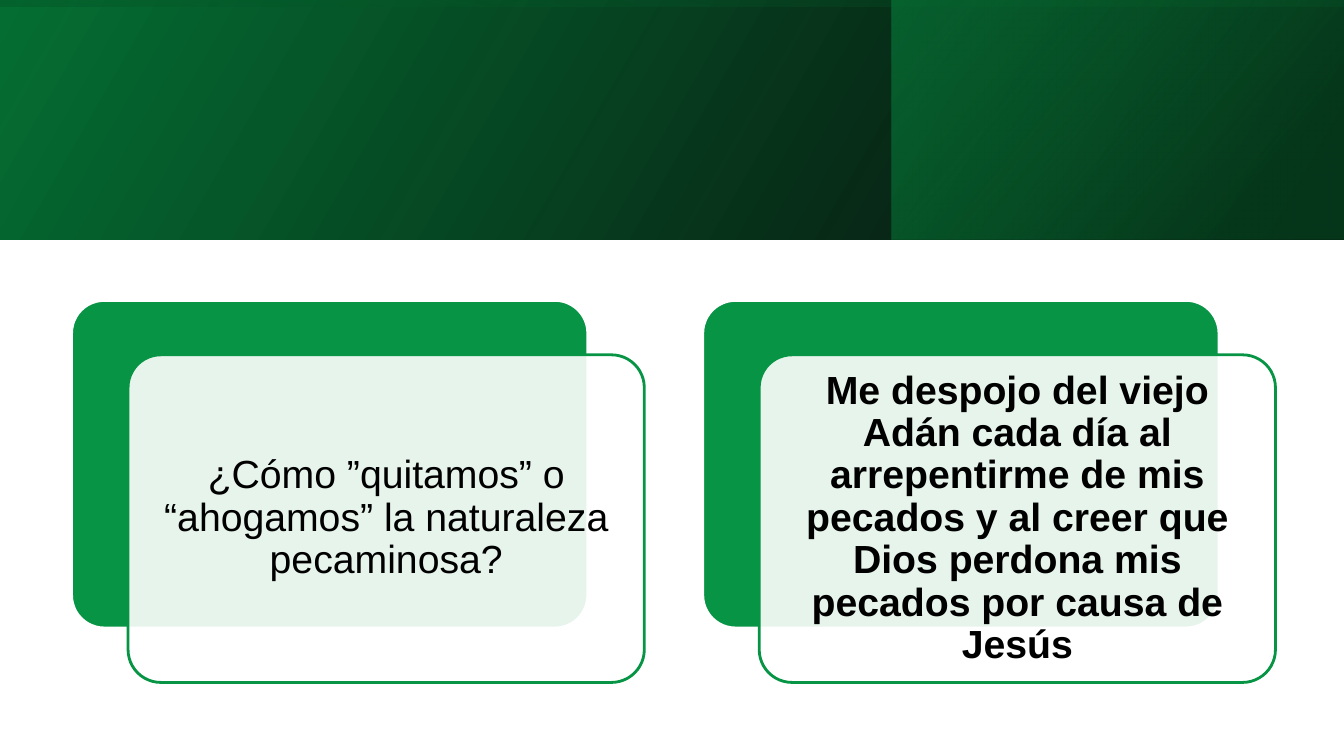
from dataclasses import dataclass

from lxml.etree import SubElement
from pptx import Presentation
from pptx.dml.color import RGBColor
from pptx.enum.shapes import MSO_SHAPE
from pptx.enum.text import MSO_ANCHOR, PP_ALIGN
from pptx.oxml.ns import qn
from pptx.shapes.autoshape import Shape
from pptx.slide import Slide
from pptx.util import Inches, Pt

GREEN, WHITE, BLACK = "079444", "FFFFFF", "000000"
CARD_W, CARD_H = 5.12, 3.25
LEFT, TOP, PITCH = 0.71, 2.98, 6.26
SHIFT_X, SHIFT_Y = 0.56, 0.54
INSET = 0.1


@dataclass
class Stop:
    place: float
    color: str
    alpha: int


@dataclass
class Band:
    box: tuple[float, float, float, float]
    angle: float
    stops: tuple[Stop, Stop]
    turn: float = 0


@dataclass
class Card:
    text: str
    bold: bool = False


BANDS = [
    Band((0, 0, 13.33, 2.38), 30, (Stop(0, BLACK, 96), Stop(1, "056F33", 100))),
    Band((8.84, 0, 4.49, 2.38), 40, (Stop(0.19, "044A22", 68), Stop(1, GREEN, 48))),
    Band((5.48, -5.48, 2.37, 13.33), 10,
         (Stop(0.23, "056F33", 16), Stop(0.99, BLACK, 45)), turn=270),
]
CARDS = [
    Card("¿Cómo ”quitamos” o “ahogamos” la naturaleza pecaminosa?"),
    Card("Me despojo del viejo Adán cada día al arrepentirme de mis pecados "
         "y al creer que Dios perdona mis pecados por causa de Jesús", bold=True),
]


def rgb(color: str) -> RGBColor:
    return RGBColor.from_string(color)


def set_alpha(shape: Shape, *alphas: int) -> None:
    """Set the opacity, in percent, of each colour in the fill, in order."""
    for node, alpha in zip(shape._element.spPr.iter(qn("a:srgbClr")), alphas):
        SubElement(node, qn("a:alpha"), val=str(alpha * 1000))


def add_band(slide: Slide, band: Band) -> None:
    shape = slide.shapes.add_shape(MSO_SHAPE.RECTANGLE, *map(Inches, band.box))
    shape.shadow.inherit = False
    shape.rotation = band.turn
    shape._element.spPr.xfrm.set("flipH", "1")
    shape.line.fill.background()
    shape.fill.gradient()
    shape.fill.gradient_angle = band.angle
    for mark, stop in zip(shape.fill.gradient_stops, band.stops):
        mark.position = stop.place
        mark.color.rgb = rgb(stop.color)
    # The theme colours carry no alpha, so it is set on the final ones.
    set_alpha(shape, *(stop.alpha for stop in band.stops))


def add_panel(slide: Slide, x: float, y: float, *, fill: str, line: str,
              alpha: int = 100) -> None:
    shape = slide.shapes.add_shape(
        MSO_SHAPE.ROUNDED_RECTANGLE, *map(Inches, (x, y, CARD_W, CARD_H)))
    shape.shadow.inherit = False
    shape.adjustments[0] = 0.1
    shape.fill.solid()
    shape.fill.fore_color.rgb = rgb(fill)
    set_alpha(shape, alpha)
    shape.line.color.rgb = rgb(line)
    shape.line.width = Pt(2)


def add_text(slide: Slide, text: str, x: float, y: float, *, bold: bool = False,
             size: float = 28, color: str = BLACK) -> None:
    box = slide.shapes.add_textbox(*map(
        Inches, (x, y, CARD_W - 2 * INSET, CARD_H - 2 * INSET)))
    frame = box.text_frame
    frame.word_wrap = True
    frame.vertical_anchor = MSO_ANCHOR.MIDDLE
    frame.margin_left = frame.margin_right = Inches(0.12)
    frame.margin_top = frame.margin_bottom = Inches(0.12)
    para = frame.paragraphs[0]
    para.alignment = PP_ALIGN.CENTER
    para.line_spacing = 0.9
    run = para.add_run()
    run.text = text
    run.font.name = "Arial"
    run.font.size = Pt(size)
    run.font.bold = bold
    run.font.color.rgb = rgb(color)


def add_card(slide: Slide, card: Card, x: float) -> None:
    add_panel(slide, x, TOP, fill=GREEN, line=WHITE)
    x, y = x + SHIFT_X, TOP + SHIFT_Y
    add_panel(slide, x, y, fill=WHITE, line=GREEN, alpha=90)
    add_text(slide, card.text, x + INSET, y + INSET, bold=card.bold)


def main() -> None:
    deck = Presentation()
    deck.slide_width, deck.slide_height = Inches(13.33), Inches(7.5)
    slide = deck.slides.add_slide(deck.slide_layouts[6])
    for band in BANDS:
        add_band(slide, band)
    for index, card in enumerate(CARDS):
        add_card(slide, card, LEFT + index * PITCH)
    deck.save("out.pptx")


if __name__ == "__main__":
    main()
